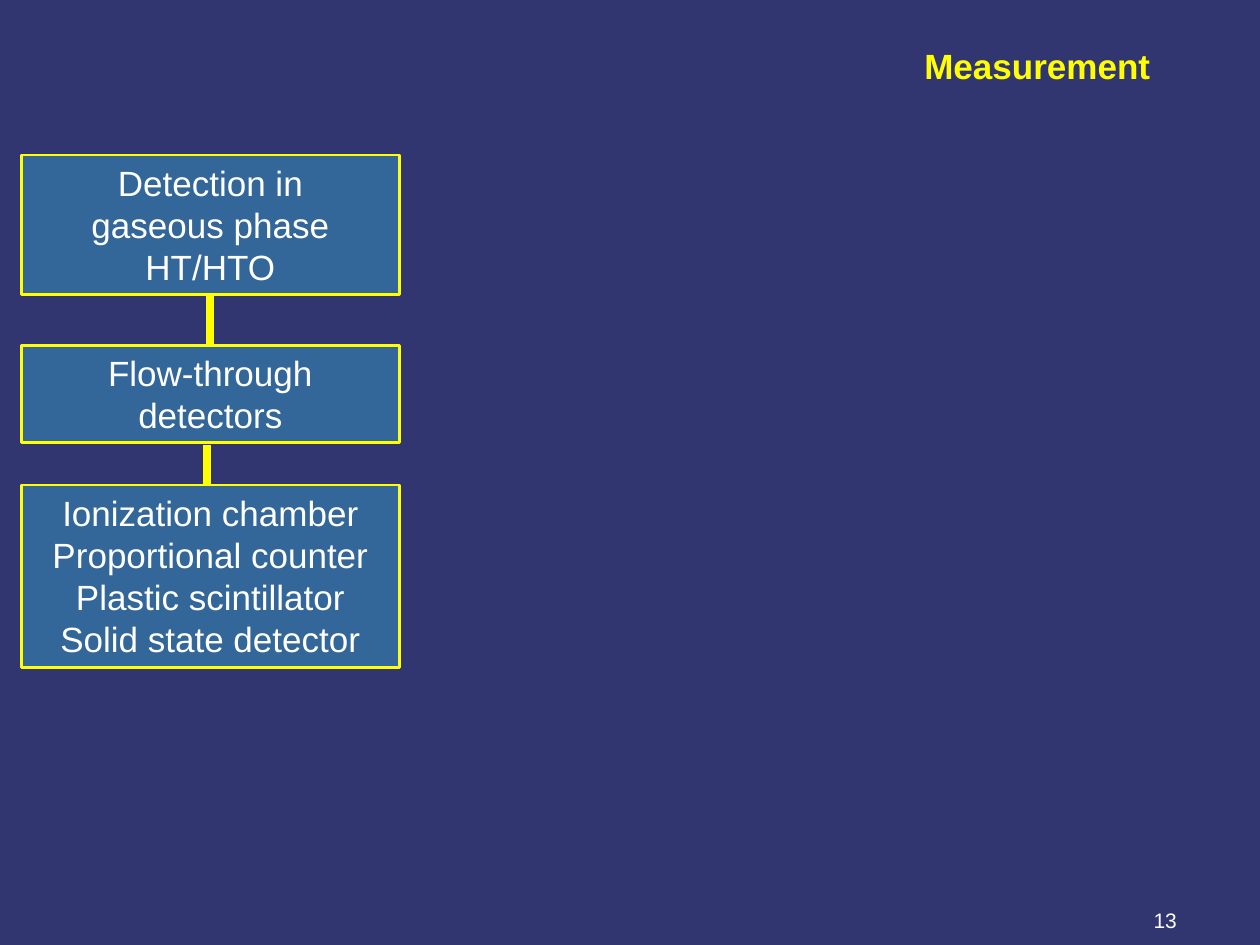
import pptx
import pptx.util
import pptx.dml.color
import pptx.enum.shapes
import pptx.enum.text
import pptx.oxml

Inches = pptx.util.Inches
Color = pptx.dml.color.RGBColor
Align = pptx.enum.text.PP_ALIGN
Anchor = pptx.enum.text.MSO_ANCHOR

NAVY = Color(0x31, 0x36, 0x71)
BLUE = Color(0x33, 0x66, 0x99)
YELLOW = Color(0xFF, 0xFF, 0x00)
WHITE = Color(0xFF, 0xFF, 0xFF)

BODY = {"name": "Arial", "size": pptx.util.Pt(20), "bold": False}
HEAD = {**BODY, "bold": True}
SMALL = {**BODY, "size": pptx.util.Pt(12)}

# Top, height and lines of each step, then the links between them
STEPS = [
    (0, 1.11, ["Detection in", "gaseous phase", "HT/HTO"]),
    (1.51, 0.77, ["Flow-through", "detectors"]),
    (2.62, 1.45, ["Ionization chamber", "Proportional counter",
                  "Plastic scintillator", "Solid state detector"]),
]
LINKS = [(1.5, 1.11, 1.51), (1.47, 2.3, 2.63)]


def write(shape, lines, font, color, align, anchor):
    frame = shape.text_frame
    frame.word_wrap = True
    frame.auto_size = pptx.enum.text.MSO_AUTO_SIZE.NONE
    frame.vertical_anchor = anchor
    frame.text = "\n".join(lines)
    for par in frame.paragraphs:
        par.alignment = align
        for key, value in font.items():
            setattr(par.runs[0].font, key, value)
        par.runs[0].font.color.rgb = color


def add_title(slide, left, top, width, height):
    title = slide.shapes.title
    place = {"left": left, "top": top, "width": width, "height": height}
    for key, value in place.items():
        setattr(title, key, Inches(value))
    write(title, ["Measurement"], HEAD, YELLOW, Align.RIGHT, Anchor.TOP)


def add_step(slide, left, top, width, height, lines):
    kind = pptx.enum.shapes.MSO_SHAPE.RECTANGLE
    box = slide.shapes.add_shape(kind, *map(Inches, (left, top, width, height)))
    box.shadow.inherit = False
    box.fill.solid()
    box.fill.fore_color.rgb = BLUE
    box.line.color.rgb = YELLOW
    box.line.width = pptx.util.Pt(1.5)
    write(box, lines, BODY, WHITE, Align.CENTER, Anchor.TOP)


def add_link(slide, x, top, end):
    kind = pptx.enum.shapes.MSO_CONNECTOR.STRAIGHT
    link = slide.shapes.add_connector(kind, *map(Inches, (x, top, x, end)))
    link.line.color.rgb = YELLOW
    link.line.width = pptx.util.Pt(4.5)
    # An empty effect list removes the shadow
    props = link.line._get_or_add_ln().getparent()
    props.append(pptx.oxml.parse_xml(
        '<a:effectLst xmlns:a='
        '"http://schemas.openxmlformats.org/drawingml/2006/main"/>'))


def add_flow(slide, left, top, width):
    for y, height, lines in STEPS:
        add_step(slide, left, top + y, width, height, lines)
    for x, start, end in LINKS:
        add_link(slide, left + x, top + start, top + end)


def add_number(slide, left, top, width, height):
    box = slide.shapes.add_textbox(*map(Inches, (left, top, width, height)))
    write(box, ["13"], SMALL, WHITE, Align.RIGHT, Anchor.MIDDLE)


def main():
    deck = pptx.Presentation()
    deck.slide_width, deck.slide_height = Inches(10), Inches(7.5)
    slide = deck.slides.add_slide(deck.slide_layouts[5])
    slide.background.fill.solid()
    slide.background.fill.fore_color.rgb = NAVY

    add_title(slide, 0.58, 0.3, 8.65, 0.44)
    add_flow(slide, 0.17, 1.23, 3)
    add_number(slide, 7.11, 7.1, 2.33, 0.4)
    deck.save("out.pptx")


if __name__ == "__main__":
    main()
